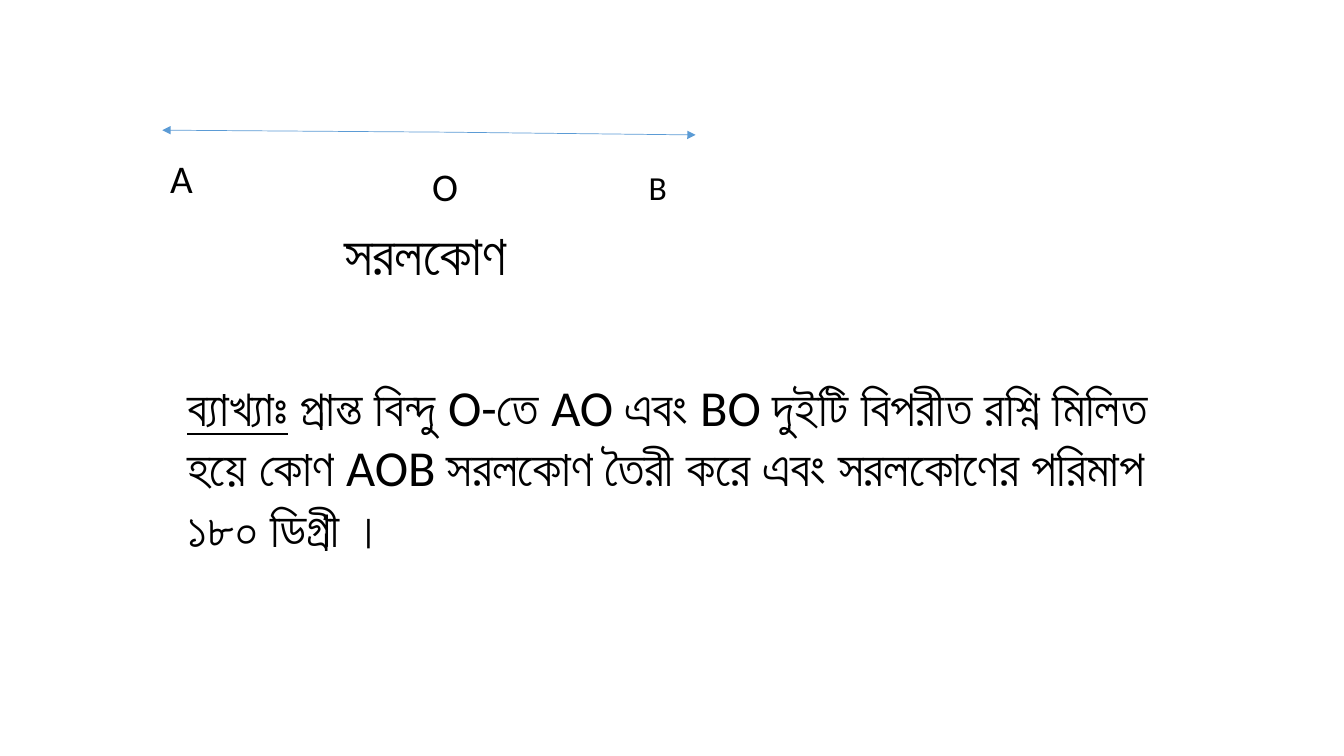
from lxml import etree
from pptx import Presentation
from pptx.dml.color import RGBColor
from pptx.enum.shapes import MSO_CONNECTOR
from pptx.enum.text import MSO_AUTO_SIZE
from pptx.oxml.ns import qn
from pptx.util import Cm, Pt


def color(hex_string):
    return RGBColor.from_string(hex_string)


def add_text(slide, left, top, width, height, size, *texts):
    """Add a one-paragraph text box with one run per text and return its runs."""
    shape = slide.shapes.add_textbox(Cm(left), Cm(top), Cm(width), Cm(height))
    text_frame = shape.text_frame
    text_frame.word_wrap = True
    text_frame.auto_size = MSO_AUTO_SIZE.SHAPE_TO_FIT_TEXT
    paragraph = text_frame.paragraphs[0]
    for text in texts:
        run = paragraph.add_run()
        run.text = text
        run.font.name = "Calibri"
        run.font.size = Pt(size)
        run.font.color.rgb = color("000000")
    return paragraph.runs


presentation = Presentation()
presentation.slide_width = Cm(33.87)
presentation.slide_height = Cm(19.05)
slide = presentation.slides.add_slide(presentation.slide_layouts[6])

# Two opposite rays from the vertex O
vertex_x, vertex_y = 11.23, 3.33
for end_x, end_y in [(4.09, 3.28), (17.53, 3.4)]:
    ray = slide.shapes.add_connector(
        MSO_CONNECTOR.STRAIGHT, Cm(vertex_x), Cm(vertex_y), Cm(end_x), Cm(end_y)
    )
    ray.line.color.rgb = color("5B9BD5")
    ray.line.width = Pt(0.5)
    etree.SubElement(ray.line._get_or_add_ln(), qn("a:tailEnd"), type="triangle")
    etree.SubElement(ray._element.spPr, qn("a:effectLst"))

# Point labels and the name of the angle
for text, left, top, width, height, size in [
    ("A", 4.04, 3.76, 2.36, 1.45, 28),
    ("O", 10.64, 3.96, 1.6, 1.45, 28),
    ("B", 16.1, 4.09, 1.42, 1.27, 24),
    ("সরলকোণ", 8.43, 5.41, 5.51, 1.96, 40),
]:
    add_text(slide, left, top, width, height, size, text)

explanation_runs = add_text(
    slide, 4.47, 9.35, 25.78, 4.88, 36,
    "ব্যাখ্যাঃ",
    " প্রান্ত বিন্দু O-তে AO এবং BO দুইটি বিপরীত রশ্নি মিলিত হয়ে কোণ AOB "
    "সরলকোণ তৈরী করে এবং সরলকোণের পরিমাপ ১৮০ ডিগ্রী ।",
)
explanation_runs[0].font.underline = True

presentation.save("out.pptx")
